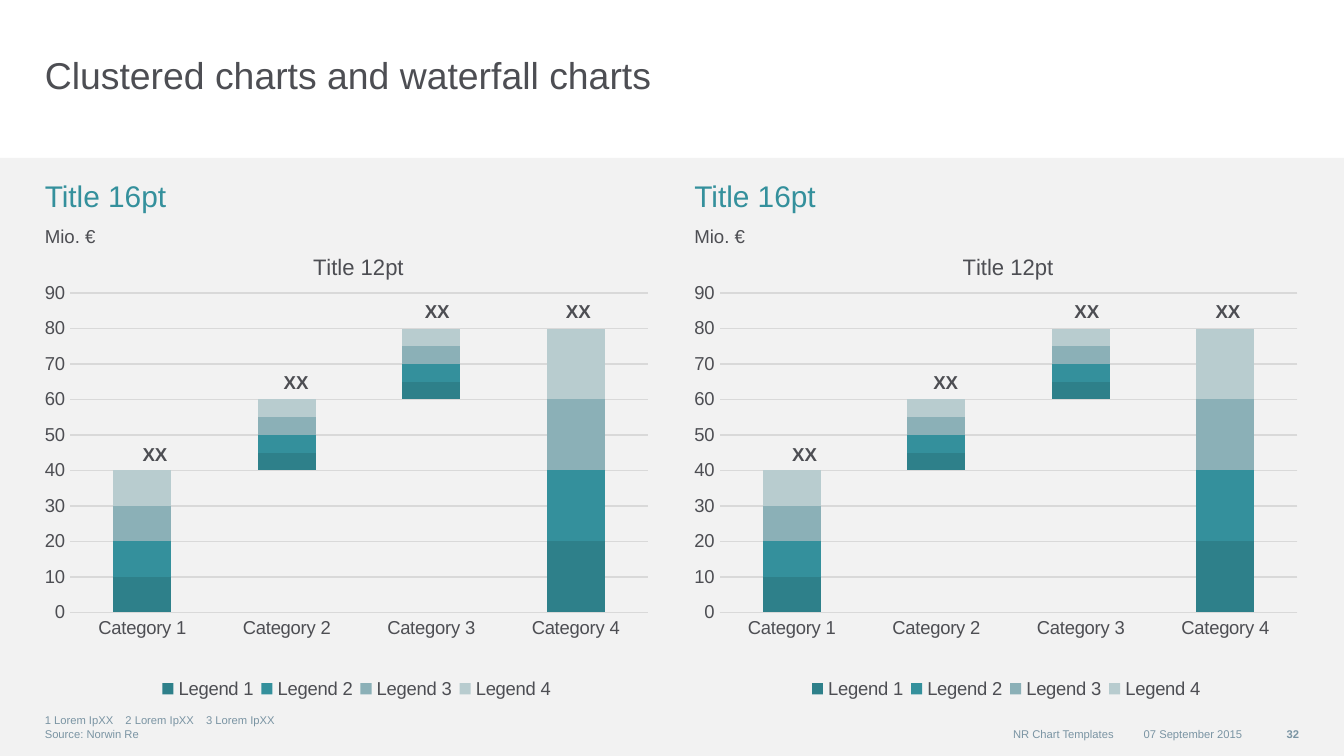
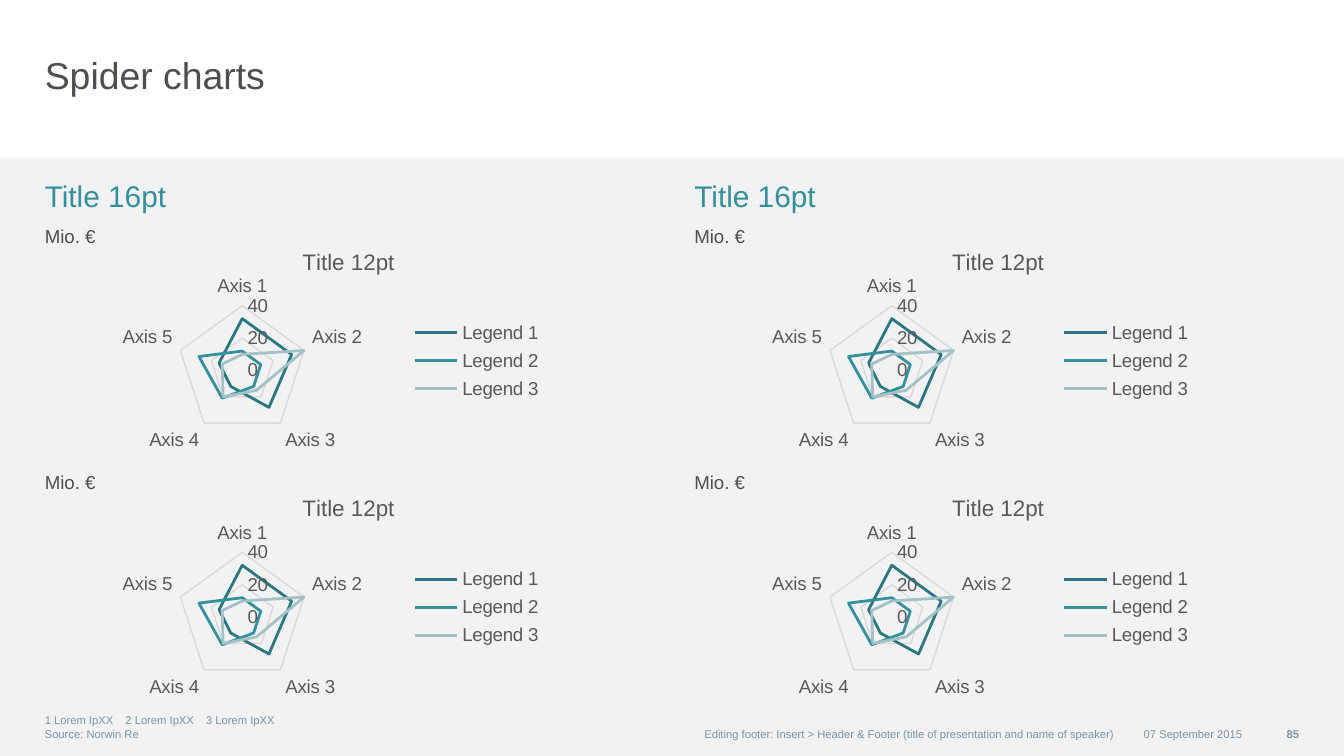
from lxml import etree
from pptx import Presentation
from pptx.chart.data import CategoryChartData
from pptx.dml.color import RGBColor
from pptx.enum.chart import XL_CHART_TYPE, XL_LEGEND_POSITION, XL_TICK_MARK
from pptx.enum.shapes import MSO_SHAPE
from pptx.enum.text import MSO_ANCHOR, MSO_AUTO_SIZE, PP_ALIGN
from pptx.oxml.ns import qn
from pptx.util import Pt

rgb = RGBColor.from_string
STACK, RADAR = XL_CHART_TYPE.COLUMN_STACKED, XL_CHART_TYPE.RADAR
BELOW, BESIDE = XL_LEGEND_POSITION.BOTTOM, XL_LEGEND_POSITION.RIGHT
NO_TICK = XL_TICK_MARK.NONE
TOP, MID, LOW = MSO_ANCHOR.TOP, MSO_ANCHOR.MIDDLE, MSO_ANCHOR.BOTTOM
LEFT, MIDST, RIGHT = PP_ALIGN.LEFT, PP_ALIGN.CENTER, PP_ALIGN.RIGHT
FIT, FIXED = MSO_AUTO_SIZE.SHAPE_TO_FIT_TEXT, MSO_AUTO_SIZE.NONE

FONT = "Arial"
DARK, GREY, TEAL, SLATE = "4D4E53", "595959", "34909C", "7A94A3"
PALE, RULE = "F2F2F2", "D9D9D9"
COLS = (24, 372)
WIDE = 323.5
ROW = 120.4


def write(shape, box, lines, size, color, bold=False, align=LEFT, anchor=TOP,
          wrap=True, foot=0, space=1.0, after=0, tabs=()):
    """Place a text shape and fill it with formatted paragraphs."""
    for key, val in zip(("left", "top", "width", "height"), box):
        setattr(shape, key, Pt(val))
    frame = shape.text_frame
    frame.text = "\n".join(lines)
    form = {"margin_left": 0, "margin_right": 0, "margin_top": 0,
            "margin_bottom": Pt(foot), "vertical_anchor": anchor,
            "word_wrap": wrap, "auto_size": FIXED if wrap else FIT}
    for key, val in form.items():
        setattr(frame, key, val)
    for para in frame.paragraphs:
        if tabs:
            stops = etree.SubElement(para._p.get_or_add_pPr(), qn("a:tabLst"))
            for stop in tabs:
                etree.SubElement(stops, qn("a:tab"), pos=str(Pt(stop)), algn="l")
        form = {"alignment": align, "line_spacing": space,
                "space_before": Pt(0), "space_after": Pt(after)}
        for key, val in form.items():
            setattr(para, key, val)
        for run in para.runs:
            form = {"name": FONT, "size": Pt(size), "bold": bold}
            for key, val in form.items():
                setattr(run.font, key, val)
            run.font.color.rgb = rgb(color)


def place(part, inner=False, **box):
    """Give a chart part a manual layout, in shares of the chart."""
    for old in part.findall(qn("c:layout")):
        part.remove(old)
    layout = etree.Element(qn("c:layout"))
    manual = etree.SubElement(layout, qn("c:manualLayout"))
    if inner:
        etree.SubElement(manual, qn("c:layoutTarget"), val="inner")
    for key in ("x", "y"):
        etree.SubElement(manual, qn(f"c:{key}Mode"), val="edge")
    for key, val in box.items():
        etree.SubElement(manual, qn(f"c:{key}"), val=str(val))
    over = part.find(qn("c:overlay"))
    if over is None:
        part.insert(0, layout)
    else:
        over.addprevious(layout)


deck = Presentation()
deck.slide_width, deck.slide_height = Pt(720), Pt(405)

# Content of the two slides
pages = [
    {"title": "Clustered charts and waterfall charts", "foot": "NR Chart Templates",
     "page": "32", "kind": STACK, "rows": (ROW,), "high": 260, "color": DARK,
     "cats": [f"Category {n}" for n in range(1, 5)],
     "series": [("Series 1", (0, 40, 60, None), None)]
     + [(f"Legend {n}", (10, 5, 5, 20), tone) for n, tone in
        enumerate(("2E808A", TEAL, "8BB0B7", "B8CCCF"), 1)],
     "top": 90, "step": 10, "side": BELOW,
     "head": {"x": 0.43, "y": 0.05},
     "key": {"x": 0.17, "y": 0.94, "w": 0.68, "h": 0.05},
     "plot": {"x": 0.028, "y": 0.141, "w": 0.972, "h": 0.658}},
    {"title": "Spider charts",
     "foot": "Editing footer: Insert > Header & Footer "
             "(title of presentation and name of speaker)",
     "page": "85", "kind": RADAR, "rows": (ROW, 252.5), "high": 128, "color": GREY,
     "cats": [f"Axis {n}" for n in range(1, 6)],
     "series": [("Legend 1", (32, 32, 28, 12, 15), "2B7781"),
                ("Legend 2", (12, 12, 12, 21, 28), TEAL),
                ("Legend 3", (10, 40, 15, 20, 13), "A5C1C6")],
     "top": 40, "step": 20, "side": BESIDE,
     "head": {"x": 0.42, "y": 0.08},
     "key": {"x": 0.59, "y": 0.38, "w": 0.25, "h": 0.38},
     "plot": {"x": 0.219, "y": 0.339, "w": 0.216, "h": 0.544}},
]

for page in pages:
    slide = deck.slides.add_slide(deck.slide_layouts[4])
    shapes = slide.shapes
    slots = {slot.placeholder_format.idx: slot for slot in slide.placeholders}
    for idx in (2, 4):
        slots[idx].element.getparent().remove(slots[idx].element)

    # Grey band, kept on the master for all slides
    if page is pages[0]:
        band = shapes.add_shape(MSO_SHAPE.RECTANGLE, 0, Pt(84.6), Pt(720), Pt(320.4))
        band.shadow.inherit = False
        band.fill.solid()
        band.fill.fore_color.rgb = rgb(PALE)
        band.line.fill.background()
        deck.slide_master.shapes.element.insert(2, band.element)

    # Titles and footers
    write(slots[0], (24, 28, 538.6, 44), [page["title"]], 20, DARK)
    for idx, left in zip((1, 3), COLS):
        write(slots[idx], (left, 95, 324, 25.2), ["Title 16pt"], 16, TEAL, after=6)
    for text, left, wide, bold in ((page["foot"], 313, 283.6, False),
                                   ("07 September 2015", 600, 65.4, False),
                                   (page["page"], 665.4, 30.6, True)):
        write(shapes.add_textbox(0, 0, 0, 0), (left, 385.2, wide, 16), [text],
              6, SLATE, bold, RIGHT, MID)
    write(shapes.add_textbox(0, 0, 0, 0), (24, 382.6, 283.6, 14),
          ["1 Lorem IpXX\t2 Lorem IpXX\t3 Lorem IpXX", "Source: Norwin Re"],
          6, SLATE, anchor=LOW, tabs=(43.2, 86.4))

    # Grid of charts
    data = CategoryChartData()
    data.categories = page["cats"]
    for name, vals, tone in page["series"]:
        data.add_series(name, vals)
    for top in page["rows"]:
        for left in COLS:
            chart = shapes.add_chart(page["kind"], Pt(left), Pt(top), Pt(WIDE),
                                     Pt(page["high"]), data).chart
            chart.font.name, chart.font.size = FONT, Pt(10)
            chart.font.color.rgb = rgb(page["color"])
            plot = chart.plots[0]
            plot.vary_by_categories = False

            # Chart title and legend
            chart.has_title = True
            frame = chart.chart_title.text_frame
            frame.text = "Title 12pt"
            font = frame.paragraphs[0].runs[0].font
            for key, val in {"name": FONT, "size": Pt(12), "bold": False}.items():
                setattr(font, key, val)
            font.color.rgb = rgb(page["color"])
            chart.has_legend = True
            chart.legend.position = page["side"]
            chart.legend.include_in_layout = False

            # Axes
            cat, value = chart.category_axis, chart.value_axis
            cat.has_major_gridlines = False
            cat.format.line.color.rgb = rgb(RULE)
            cat.format.line.width = Pt(0.75)
            form = {"minimum_scale": 0, "maximum_scale": page["top"],
                    "major_unit": page["step"], "has_major_gridlines": True}
            for key, val in form.items():
                setattr(value, key, val)
            value.format.line.fill.background()
            grid = value.major_gridlines.format.line
            grid.color.rgb, grid.width = rgb(RULE), Pt(0.75)
            for axis in (cat, value):
                axis.major_tick_mark = axis.minor_tick_mark = NO_TICK
                axis.tick_labels.number_format = "General"
                axis.tick_labels.number_format_is_linked = False

            # Series
            for ser, (name, vals, tone) in zip(plot.series, page["series"]):
                if page["kind"] == RADAR:
                    ser.smooth = False
                    ser.format.line.color.rgb = rgb(tone)
                    ser.format.line.width = Pt(1.5)
                elif tone:
                    ser.format.fill.solid()
                    ser.format.fill.fore_color.rgb = rgb(tone)
                else:
                    ser.format.fill.background()

            # Waterfall: hide the base series in the legend
            if page["kind"] == STACK:
                plot.gap_width, plot.overlap = 150, 100
                entry = etree.Element(qn("c:legendEntry"))
                etree.SubElement(entry, qn("c:idx"), val="0")
                etree.SubElement(entry, qn("c:delete"), val="1")
                chart.element.xpath("//c:legendPos")[0].addnext(entry)

            place(chart.element.xpath("c:chart/c:title")[0], **page["head"])
            place(chart.element.xpath("//c:legend")[0], **page["key"])
            place(chart.element.xpath("//c:plotArea")[0], True, **page["plot"])

            # Unit, and totals above the stacks
            write(shapes.add_textbox(0, 0, 0, 0), (left, top, 27.4, 12.2),
                  ["Mio. €"], 10, DARK, wrap=False)
            if page["kind"] == STACK:
                for num, total in enumerate((40, 60, 80, 80)):
                    box = (left + 52.2 + num * 75.6, 311.8 - total * 1.91, 13.7, 17.3)
                    write(shapes.add_textbox(0, 0, 0, 0), box, ["XX"], 10, DARK,
                          True, MIDST, LOW, False, foot=3.6, space=1.1)

deck.save("out.pptx")
